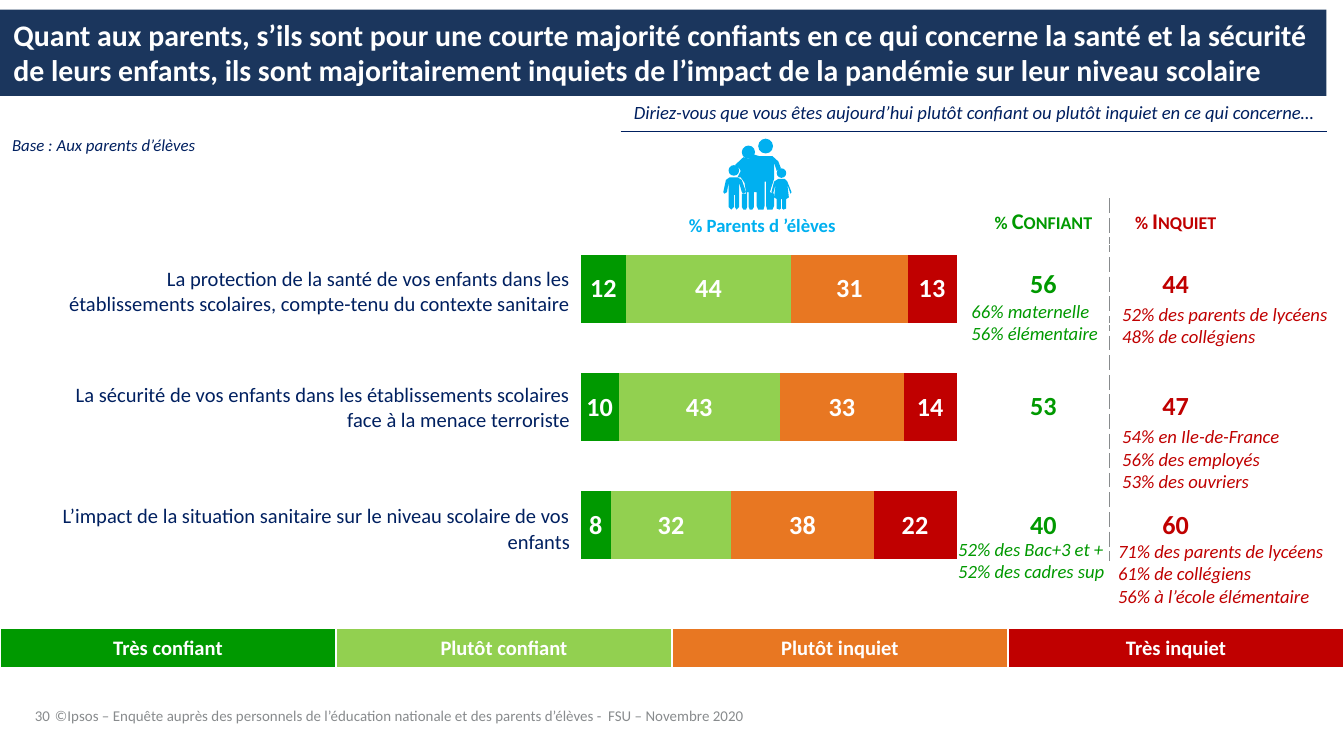
"""Build the slide on how confident or worried parents are about their children."""
from lxml import etree
from pptx import Presentation
from pptx.chart.data import CategoryChartData
from pptx.dml.color import RGBColor
from pptx.enum.chart import XL_CHART_TYPE as CT
from pptx.enum.shapes import MSO_CONNECTOR as CONN, MSO_SHAPE as SHAPE
from pptx.enum.text import MSO_ANCHOR as ANC, MSO_AUTO_SIZE as AUTO, PP_ALIGN as AL
from pptx.oxml import parse_xml
from pptx.oxml.ns import nsdecls, qn
from pptx.util import Cm, Pt

GREEN, LIME, ORANGE, RED = "009900", "92D050", "E87722", "C00000"
NAVY, GREY, SKY, WHITE = "002060", "888B8D", "00B0F0", "FFFFFF"
FONT = "Calibri"


def rgb(color):
    return RGBColor.from_string(color)


def write(tf, lines, size, color, bold=False, italic=False, align=AL.LEFT):
    for i, line in enumerate(lines):
        p = tf.add_paragraph() if i else tf.paragraphs[0]
        p.alignment = align
        r = p.add_run()
        r.text = line
        r.font.name, r.font.size = FONT, Pt(size)
        r.font.bold, r.font.italic = bold, italic
        r.font.color.rgb = rgb(color)


prs = Presentation()
prs.slide_width, prs.slide_height = Cm(25.4), Cm(14.28)
s = prs.slides.add_slide(prs.slide_layouts[5])

title = s.shapes.title
title.left, title.top, title.width, title.height = Cm(0), Cm(0.18), Cm(25.07), Cm(1.63)
title.fill.solid()
title.fill.fore_color.rgb = rgb("1B365D")
tf = title.text_frame
tf.auto_size, tf.vertical_anchor = AUTO.NONE, ANC.TOP
write(tf, ["Quant aux parents, s’ils sont pour une courte majorité confiants en ce qui concerne "
           "la santé et la sécurité de leurs enfants, ils sont majoritairement inquiets de "
           "l’impact de la pandémie sur leur niveau scolaire"], 16, WHITE, bold=True)

data = CategoryChartData()
data.categories = ["1", "2", "3"]
answers = [
    ("Très confiant", (12, 10, 8), GREEN),
    ("Plutôt confiant", (44, 43, 32), LIME),
    ("Plutôt inquiet", (31, 33, 38), ORANGE),
    ("Très inquiet", (13, 14, 22), RED),
]
for name, values, color in answers:
    data.add_series(name, values)
chart = s.shapes.add_chart(CT.BAR_STACKED_100, Cm(8.18), Cm(4.34), Cm(9.9), Cm(6.7), data).chart
chart.has_legend = chart.has_title = False
chart.font.name, chart.font.size = FONT, Pt(10)
chart.font.color.rgb = rgb("222223")
chart.category_axis.reverse_order = True
chart.category_axis.visible = chart.value_axis.visible = False
chart.value_axis.has_major_gridlines = False
chart.value_axis.maximum_scale = 1
plot = chart.plots[0]
plot.gap_width, plot.overlap, plot.vary_by_categories = 75, 100, False
for series, (name, values, color) in zip(plot.series, answers):
    series.format.fill.solid()
    series.format.fill.fore_color.rgb = rgb(color)
    labels = series.data_labels
    labels.show_value = True
    labels.font.name, labels.font.size, labels.font.bold = FONT, Pt(14), True
    labels.font.color.rgb = rgb(WHITE)
area = chart._chartSpace.chart.plotArea
for layout in area.findall(qn("c:layout")):
    area.remove(layout)
area.insert(0, parse_xml(
    f'<c:layout {nsdecls("c")}><c:manualLayout><c:layoutTarget val="inner"/>'
    '<c:xMode val="edge"/><c:yMode val="edge"/><c:x val="0.283"/><c:y val="0"/>'
    '<c:w val="0.717"/><c:h val="1"/></c:manualLayout></c:layout>'))

legend = [[(name, 11, color) for name, values, color in answers]]
questions = [[(text, 11, NAVY)] for text in (
    "La protection de la santé de vos enfants dans les établissements scolaires, "
    "compte-tenu du contexte sanitaire",
    "La sécurité de vos enfants dans les établissements scolaires face à la menace terroriste",
    "L’impact de la situation sanitaire sur le niveau scolaire de vos enfants")]
totals = [[("% Confiant", 12, GREEN), ("% Inquiet", 12, RED)]]
totals += [[(a, 14, GREEN), (b, 14, RED)] for a, b in (("56", "44"), ("53", "47"), ("40", "60"))]
tables = [
    (legend, 0, 11.86, 6.35, (0.76,), AL.CENTER),
    (questions, 1.14, 4.65, 9.65, (1.7, 2.69, 1.9), AL.RIGHT),
    (totals, 18.47, 3.76, 2.5, (0.86, 1.5, 3.1, 1.4), AL.CENTER),
]
for rows, x, y, col_width, heights, align in tables:
    n = len(rows[0])
    table = s.shapes.add_table(len(rows), n, Cm(x), Cm(y), Cm(col_width * n), Cm(sum(heights))).table
    table.first_row = table.horz_banding = False
    for column in table.columns:
        column.width = Cm(col_width)
    for i, row in enumerate(rows):
        table.rows[i].height = Cm(heights[i])
        for j, (text, size, color) in enumerate(row):
            cell = table.cell(i, j)
            cell.vertical_anchor = ANC.MIDDLE
            if rows is legend:
                cell.fill.solid()
                cell.fill.fore_color.rgb = rgb(color)
                color = WHITE
            else:
                cell.fill.background()
                cell.margin_left = cell.margin_right = cell.margin_top = Cm(0.02)
                cell.margin_bottom = Cm(0)
            write(cell.text_frame, [text], size, color, bold=rows is not questions, align=align)
            if rows is totals:
                if i == 0:
                    cell.text_frame.paragraphs[0].runs[0].font._element.set("cap", "small")
                cell._tc.get_or_add_tcPr().insert(0, parse_xml(
                    f'<a:{"lnL" if j else "lnR"} {nsdecls("a")} w="12700"><a:solidFill>'
                    f'<a:srgbClr val="{GREY}"/></a:solidFill><a:prstDash val="sysDash"/>'
                    f'</a:{"lnL" if j else "lnR"}>'))

rule = s.shapes.add_connector(CONN.STRAIGHT, Cm(11.73), Cm(2.49), Cm(25.07), Cm(2.49))
rule.line.color.rgb = rgb(NAVY)
rule.line.width = Pt(0.5)
etree.SubElement(rule._element.spPr, qn("a:effectLst"))

captions = [
    (0.66, 13.03, 0.86, 0.66, "30", 8, GREY, False, False, AL.LEFT, ANC.BOTTOM, 0),
    (0.79, 13.23, 18.77, 0.51, "©Ipsos – Enquête auprès des personnels de l’éducation nationale "
     "et des parents d’élèves -  FSU – Novembre 2020",
     8, GREY, False, False, AL.LEFT, ANC.TOP, 0.25),
    (11.73, 1.5, 13.51, 1.24, "Diriez-vous que vous êtes aujourd’hui plutôt confiant ou plutôt "
     "inquiet en ce qui concerne…", 10, NAVY, False, True, AL.LEFT, ANC.MIDDLE, 0.25),
    (0.23, 2.54, 6.07, 0.38, "Base : Aux parents d’élèves",
     9, NAVY, False, True, AL.LEFT, ANC.TOP, 0),
    (12.65, 3.91, 3.51, 0.69, "% Parents d ’élèves",
     10, SKY, True, False, AL.CENTER, ANC.TOP, 0.25),
]
notes = [
    (18.36, 5.66, GREEN, "66% maternelle\n56% élémentaire"),
    (21.21, 5.72, RED, "52% des parents de lycéens\n48% de collégiens"),
    (21.21, 8.03, RED, "54% en Ile-de-France\n56% des employés\n53% des ouvriers"),
    (18.11, 10.16, GREEN, "52% des Bac+3 et +\n52% des cadres sup"),
    (21.13, 10.19, RED, "71% des parents de lycéens\n61% de collégiens\n56% à l’école élémentaire"),
]
for x, y, color, text in notes:
    height = 0.42 * len(text.split("\n"))
    captions.append((x, y, 3.94, height, text, 10, color, False, True, AL.LEFT, ANC.TOP, 0))
for x, y, w, h, text, size, color, bold, italic, align, anchor, inset in captions:
    tf = s.shapes.add_textbox(Cm(x), Cm(y), Cm(w), Cm(h)).text_frame
    tf.word_wrap, tf.vertical_anchor = True, anchor
    tf.margin_left = tf.margin_right = Cm(inset)
    tf.margin_top = tf.margin_bottom = Cm(inset / 2)
    write(tf, text.split("\n"), size, color, bold, italic, align)

adults = [
    (1389, 312), (1405, 297), (1415, 300), (1425, 292), (1435, 295), (1460, 295), (1471, 305),
    (1476, 318), (1468, 323), (1463, 307), (1463, 338), (1455, 363), (1463, 366), (1463, 389),
    (1460, 396), (1450, 396), (1448, 389), (1448, 343), (1445, 343), (1445, 389), (1443, 396),
    (1433, 396), (1430, 389), (1430, 363), (1425, 363), (1425, 391), (1422, 396), (1417, 396),
    (1415, 391), (1415, 363), (1412, 363), (1412, 391), (1410, 396), (1405, 396), (1402, 391),
    (1402, 366), (1410, 366), (1410, 363), (1407, 345), (1400, 335), (1394, 335), (1400, 323),
    (1397, 318)]
boy = [
    (1367, 363), (1372, 340), (1379, 335), (1394, 335), (1402, 340), (1410, 363), (1405, 366),
    (1402, 363), (1397, 345), (1397, 391), (1392, 396), (1389, 391), (1389, 368), (1387, 368),
    (1387, 391), (1382, 396), (1377, 391), (1377, 345), (1374, 363), (1369, 366)]
girl = [
    (1458, 363), (1463, 343), (1471, 338), (1483, 338), (1488, 343), (1496, 363), (1494, 366),
    (1488, 348), (1491, 373), (1486, 376), (1486, 394), (1481, 396), (1478, 394), (1478, 376),
    (1476, 376), (1476, 394), (1473, 396), (1468, 394), (1468, 376), (1463, 373), (1466, 348),
    (1461, 366)]
family = []
for outline in (adults, boy, girl):
    body = s.shapes.build_freeform(*outline[0], scale=Cm(0.01))
    body.add_line_segments(outline[1:], close=True)
    family.append(body.convert_to_shape())
for x, y, d in ((14.33, 2.62, 0.28), (14.02, 2.75, 0.25), (13.77, 3.12, 0.2), (14.68, 3.18, 0.18)):
    family.append(s.shapes.add_shape(SHAPE.OVAL, Cm(x), Cm(y), Cm(d), Cm(d)))
for sp in family:
    sp.shadow.inherit = False
    sp.fill.solid()
    sp.fill.fore_color.rgb = rgb(SKY)
    sp.line.fill.background()

prs.save("out.pptx")
